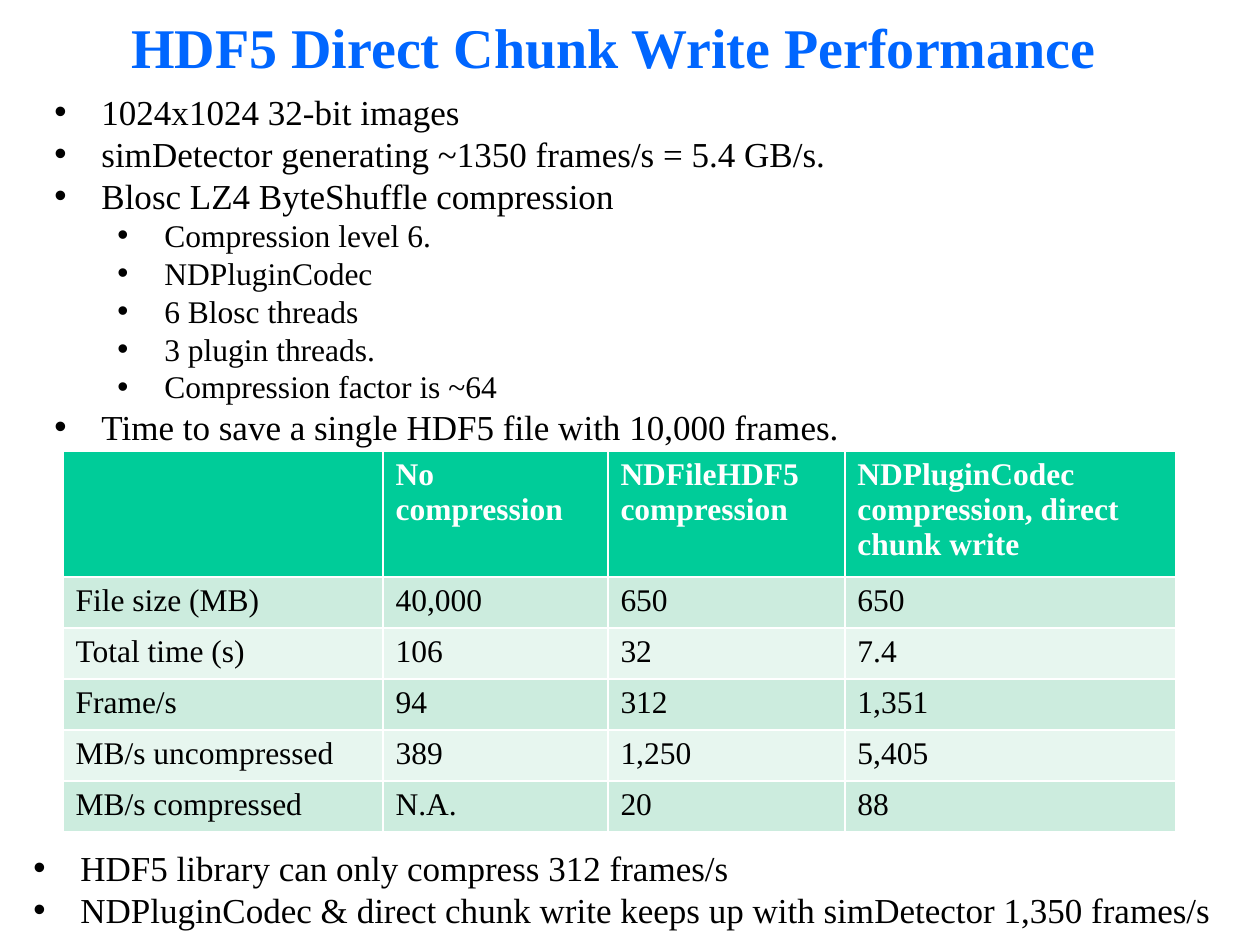
import pptx
import pptx.util
import pptx.dml.color
import pptx.enum.text
import pptx.oxml.ns
from lxml import etree

FONT = "Times New Roman"
COLORS = {"title": "0066FF", "text": "000000", "header": "00CC99",
          "odd": "CCECDE", "even": "E7F6EF", "white": "FFFFFF"}
qn = pptx.oxml.ns.qn


def px(n):
    return round(n * 914400 / 126)


def add_text(box, lines, color, bold=False, bullets=True):
    left, top, width, height = map(px, box)
    frame = slide.shapes.add_textbox(left, top, width, height).text_frame
    frame.word_wrap = True
    for i, (level, size, wording) in enumerate(lines):
        paragraph = frame.paragraphs[0] if i == 0 else frame.add_paragraph()
        paragraph.text = wording
        paragraph.font.name = FONT
        paragraph.font.size = pptx.util.Pt(size)
        paragraph.font.bold = bold
        paragraph.font.color.rgb = pptx.dml.color.RGBColor.from_string(COLORS[color])
        if bullets:
            paragraph.level = level
            paragraph.line_spacing = 1.0
            properties = paragraph._p.get_or_add_pPr()
            properties.set("marL", str(px(47 + 63 * level)))
            properties.set("indent", str(px(-47)))
            bullet_font = etree.Element(qn("a:buFont"), typeface="Arial")
            bullet = etree.Element(qn("a:buChar"), char="•")
            properties.find(qn("a:lnSpc")).addnext(bullet_font)
            bullet_font.addnext(bullet)
    return frame


deck = pptx.Presentation()
deck.slide_width, deck.slide_height = px(1260), px(945)
slide = deck.slides.add_slide(deck.slide_layouts[6])

title = add_text((52, 10, 1124, 73), [(0, 32, "HDF5 Direct Chunk Write Performance")],
                 "title", bold=True, bullets=False)
title.vertical_anchor = pptx.enum.text.MSO_ANCHOR.MIDDLE
title.paragraphs[0].alignment = pptx.enum.text.PP_ALIGN.CENTER

test_setup = [
    (0, 20, "1024x1024 32-bit images"),
    (0, 20, "simDetector generating ~1350 frames/s = 5.4 GB/s."),
    (0, 20, "Blosc LZ4 ByteShuffle compression"),
    (1, 18, "Compression level 6."),
    (1, 18, "NDPluginCodec"),
    (1, 18, "6 Blosc threads"),
    (1, 18, "3 plugin threads."),
    (1, 18, "Compression factor is ~64"),
    (0, 20, "Time to save a single HDF5 file with 10,000 frames."),
]
add_text((42, 84, 1166, 368), test_setup, "text")

results = [
    ["", "No compression", "NDFileHDF5 compression",
     "NDPluginCodec compression, direct chunk write"],
    ["File size (MB)", "40,000", "650", "650"],
    ["Total time (s)", "106", "32", "7.4"],
    ["Frame/s", "94", "312", "1,351"],
    ["MB/s uncompressed", "389", "1,250", "5,405"],
    ["MB/s compressed", "N.A.", "20", "88"],
]
column_widths = [320, 225, 237, 331]
row_heights = [117] + [51] * 5
timings = slide.shapes.add_table(len(results), len(column_widths), px(63), px(451),
                                 px(sum(column_widths)), px(sum(row_heights))).table
for column, width in zip(timings.columns, column_widths):
    column.width = px(width)
for row, height in zip(timings.rows, row_heights):
    row.height = px(height)

for r, values in enumerate(results):
    fill = "header" if r == 0 else "odd" if r % 2 else "even"
    for c, value in enumerate(values):
        cell = timings.cell(r, c)
        cell.text = value
        cell.fill.solid()
        cell.fill.fore_color.rgb = pptx.dml.color.RGBColor.from_string(COLORS[fill])
        font = cell.text_frame.paragraphs[0].font
        font.name = FONT
        font.size = pptx.util.Pt(18)
        font.bold = r == 0
        font.color.rgb = pptx.dml.color.RGBColor.from_string(
            COLORS["white" if r == 0 else "text"])

conclusions = [
    (0, 20, "HDF5 library can only compress 312 frames/s"),
    (0, 20, "NDPluginCodec & direct chunk write keeps up with simDetector 1,350 frames/s"),
]
add_text((21, 840, 1229, 95), conclusions, "text")

deck.save("out.pptx")
